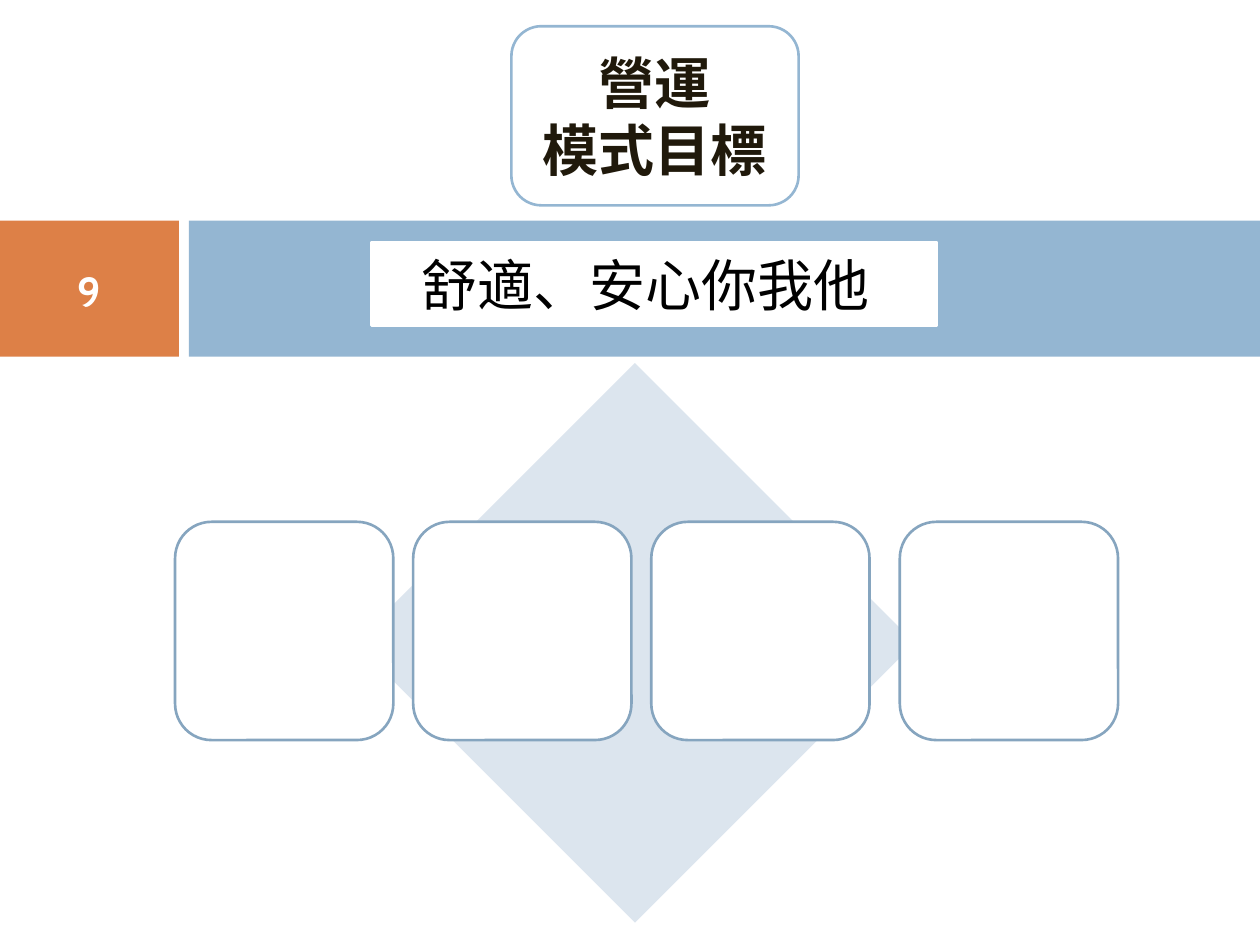
from pptx import Presentation
from pptx.dml.color import RGBColor
from pptx.enum.shapes import MSO_SHAPE as Shape
from pptx.enum.text import MSO_ANCHOR as Anchor, MSO_AUTO_SIZE as AutoSize, PP_ALIGN as Align
from pptx.util import Cm, Pt

WHITE = RGBColor(0xFF, 0xFF, 0xFF)
BLACK = RGBColor(0x00, 0x00, 0x00)
DARK = RGBColor(0x20, 0x19, 0x0B)
ORANGE = RGBColor(0xDD, 0x80, 0x47)
BLUE = RGBColor(0x94, 0xB6, 0xD2)
PALE_BLUE = RGBColor(0xDC, 0xE5, 0xEE)
CARD_EDGE = RGBColor(0x86, 0xA5, 0xBF)


def add_box(shapes, kind, left, top, width, height, fill, edge=None):
    box = shapes.add_shape(kind, Cm(left), Cm(top), Cm(width), Cm(height))
    box.shadow.inherit = False
    box.fill.solid()
    box.fill.fore_color.rgb = fill
    if edge is None:
        box.line.fill.background()
    else:
        box.line.color.rgb = edge
        box.line.width = Pt(1.5)
    return box


def write(shape, text, size=32, color=BLACK, bold=False, align=Align.CENTER):
    frame = shape.text_frame
    frame.word_wrap = True
    frame.auto_size = AutoSize.NONE
    frame.vertical_anchor = Anchor.MIDDLE
    paragraph = frame.paragraphs[0]
    paragraph.text = text
    paragraph.alignment = align
    for run in paragraph.runs:
        run.font.name = "Cabin"
        run.font.size = Pt(size)
        run.font.bold = bold
        run.font.color.rgb = color


prs = Presentation()
prs.slide_width, prs.slide_height = Cm(25.4), Cm(19.05)
slide = prs.slides.add_slide(prs.slide_layouts[5])
shapes = slide.shapes

# Band across the slide
add_box(shapes, Shape.RECTANGLE, 0, 4.45, 3.61, 2.74, ORANGE)
add_box(shapes, Shape.RECTANGLE, 3.81, 4.45, 21.59, 2.74, BLUE)

# Topic above the band
topic = add_box(shapes, Shape.ROUNDED_RECTANGLE, 10.31, 0.53, 5.79, 3.61, WHITE, BLUE)
write(topic, "營運\v模式目標", color=DARK, bold=True)

# Title, brought in front of the band
title = shapes.title
title.left, title.top, title.width, title.height = Cm(7.49), Cm(4.88), Cm(11.4), Cm(1.68)
title.fill.solid()
title.fill.fore_color.rgb = WHITE
title.line.color.rgb = WHITE
title.line.width = Pt(1.5)
write(title, "舒適、安心你我他", align=Align.LEFT)
title.text_frame.margin_left = Cm(1)
topic.element.addnext(title.element)

# Diamond with four empty cards
matrix = shapes.add_group_shape().shapes
add_box(matrix, Shape.DIAMOND, 7.16, 7.32, 11.28, 11.28, PALE_BLUE)
for card_left in (3.53, 8.33, 13.13, 18.14):
    add_box(matrix, Shape.ROUNDED_RECTANGLE, card_left, 10.52, 4.4, 4.4, WHITE, CARD_EDGE)

# Page number
page_number = shapes.add_textbox(0, Cm(4.88), Cm(3.61), Cm(1.96))
write(page_number, "9", size=24, color=WHITE, bold=True)

prs.save("out.pptx")
